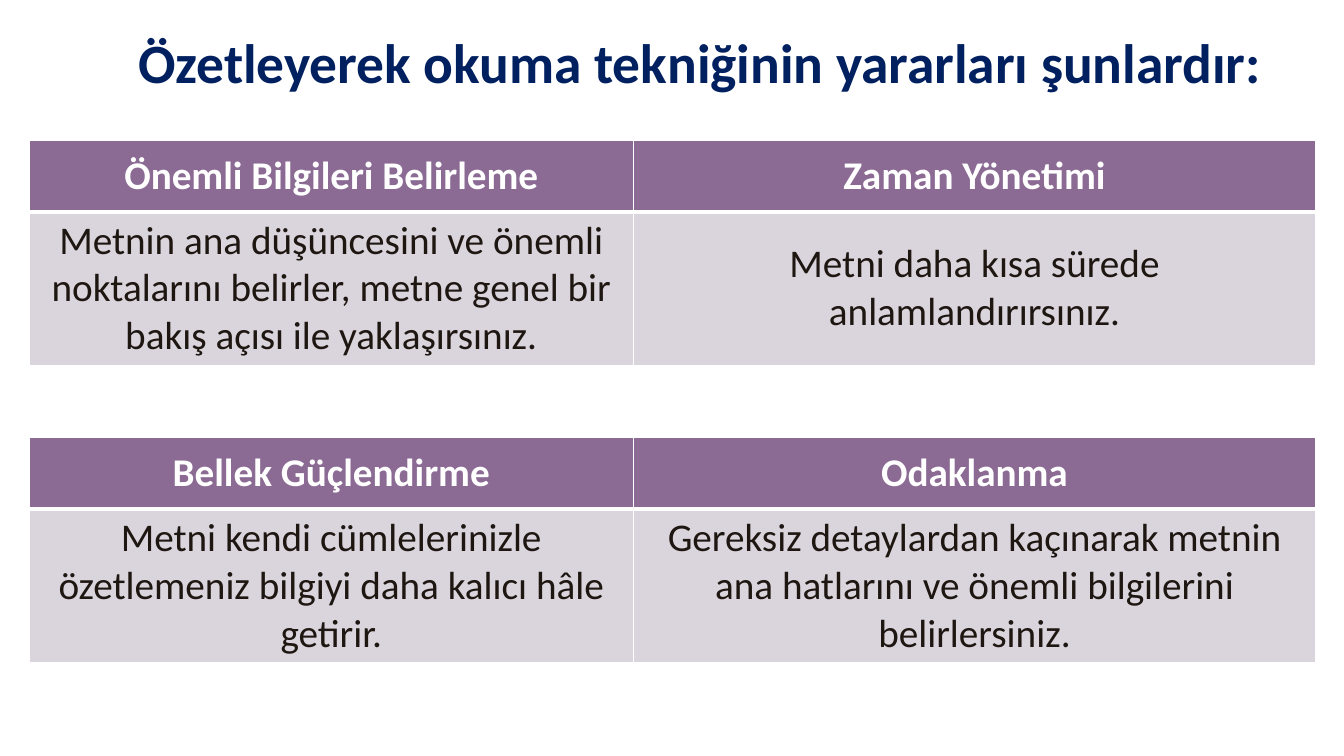
from lxml import etree
from pptx import Presentation
from pptx.dml.color import RGBColor
from pptx.enum.text import MSO_ANCHOR, MSO_AUTO_SIZE, PP_ALIGN
from pptx.oxml.ns import qn
from pptx.util import Inches, Pt

CENTER = PP_ALIGN.CENTER
MIDDLE = MSO_ANCHOR.MIDDLE
BOTTOM = MSO_ANCHOR.BOTTOM
NO_AUTOFIT = MSO_AUTO_SIZE.NONE

FONT = "Calibri"
NAVY, PURPLE, LILAC, INK, WHITE = "002060", "8B6A94", "DAD4DC", "1D1611", "FFFFFF"
COLUMN_WIDTHS = (5.99, 6.77)
ROW_HEIGHTS = (0.71, 1.5)
TABLE_LEFT, FIRST_TOP, TABLE_STEP = 0.29, 1.39, 2.95

BENEFITS = [
    [
        ("Önemli Bilgileri Belirleme",
         "Metnin ana düşüncesini ve önemli noktalarını belirler, "
         "metne genel bir bakış açısı ile yaklaşırsınız."),
        ("Zaman Yönetimi", "Metni daha kısa sürede anlamlandırırsınız."),
    ],
    [
        ("Bellek Güçlendirme",
         "Metni kendi cümlelerinizle özetlemeniz bilgiyi daha kalıcı hâle getirir."),
        ("Odaklanma",
         "Gereksiz detaylardan kaçınarak metnin ana hatlarını ve "
         "önemli bilgilerini belirlersiniz."),
    ],
]


def rgb(hex_color):
    """Turn a hex string into a colour."""
    return RGBColor.from_string(hex_color)


class BenefitSlide:
    """Holds the slide and draws its title and benefit tables."""

    def __init__(self, presentation):
        """Add a title-only slide with a white background."""
        self.slide = presentation.slides.add_slide(presentation.slide_layouts[5])
        background = self.slide.background.fill
        background.solid()
        background.fore_color.rgb = rgb(WHITE)

    def styled_text(self, frame, text, size, color, bold):
        """Set one centred, styled paragraph."""
        frame.text = text
        paragraph = frame.paragraphs[0]
        paragraph.alignment = CENTER
        font = paragraph.runs[0].font
        font.name, font.size, font.bold = FONT, Pt(size), bold
        font.color.rgb = rgb(color)
        return paragraph

    def title(self, text, left, top, width, height):
        """Place and format the title placeholder."""
        heading = self.slide.shapes.title
        heading.left, heading.top = Inches(left), Inches(top)
        heading.width, heading.height = Inches(width), Inches(height)
        frame = heading.text_frame
        frame.auto_size = NO_AUTOFIT
        frame.word_wrap = True
        frame.vertical_anchor = BOTTOM
        frame.margin_left = frame.margin_right = Inches(0.13)
        frame.margin_top = frame.margin_bottom = Inches(0.07)
        self.styled_text(frame, text, 39.6, NAVY, True).line_spacing = 0.85

    def borders(self, cell, widths):
        """Draw white cell borders, given widths in points by side."""
        properties = cell._tc.get_or_add_tcPr()
        for side, width in widths.items():
            line = etree.SubElement(properties, qn(f"a:ln{side}"), w=str(Pt(width)))
            fill = etree.SubElement(line, qn("a:solidFill"))
            etree.SubElement(fill, qn("a:srgbClr"), val=WHITE)

    def cell(self, cell, text, is_header):
        """Fill and label one table cell."""
        top, bottom = (1, 3) if is_header else (3, 1)
        self.borders(cell, {"L": 1, "R": 1, "T": top, "B": bottom})
        cell.fill.solid()
        cell.fill.fore_color.rgb = rgb(PURPLE if is_header else LILAC)
        cell.vertical_anchor = MIDDLE
        self.styled_text(cell.text_frame, text, 28, WHITE if is_header else INK, is_header)

    def table(self, benefits, top):
        """Add a table with one benefit per column."""
        table = self.slide.shapes.add_table(
            len(ROW_HEIGHTS), len(COLUMN_WIDTHS), Inches(TABLE_LEFT), Inches(top),
            Inches(sum(COLUMN_WIDTHS)), Inches(sum(ROW_HEIGHTS))).table
        for row, height in zip(table.rows, ROW_HEIGHTS):
            row.height = Inches(height)
        for column, width in zip(table.columns, COLUMN_WIDTHS):
            column.width = Inches(width)
        for column_index, benefit in enumerate(benefits):
            for row_index, text in enumerate(benefit):
                self.cell(table.cell(row_index, column_index), text, row_index == 0)


def main():
    """Build and save the slide."""
    presentation = Presentation()
    presentation.slide_width = Inches(13.33)
    presentation.slide_height = Inches(7.5)
    slide = BenefitSlide(presentation)
    slide.title("Özetleyerek okuma tekniğinin yararları şunlardır:", 1, 0.36, 11.89, 0.65)
    for index, benefits in enumerate(BENEFITS):
        slide.table(benefits, FIRST_TOP + index * TABLE_STEP)
    presentation.save("out.pptx")


if __name__ == "__main__":
    main()
